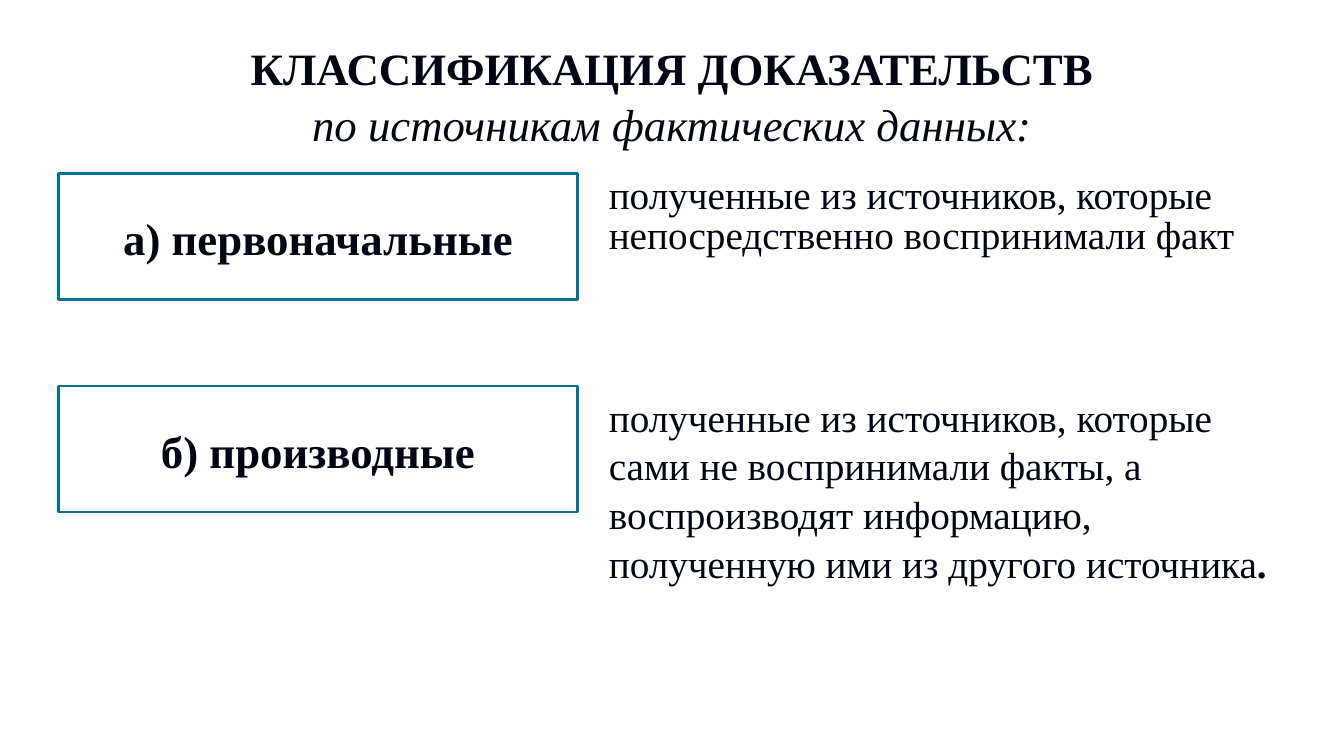
from pptx import Presentation
from pptx.dml.color import RGBColor
from pptx.enum.shapes import MSO_SHAPE
from pptx.enum.text import MSO_ANCHOR, PP_ALIGN
from pptx.util import Inches, Pt

# Content: runs are (text, bold, italic)
TITLE = [
    [("КЛАССИФИКАЦИЯ ДОКАЗАТЕЛЬСТВ", True, False)],
    [("по источникам фактических данных:", False, True)],
]
# Each row: label, description runs, description width and height, line spacing
KINDS = [
    ("а) первоначальные",
     [("полученные из источников, которые непосредственно воспринимали факт", False, False)],
     7.4, 1.56, 0.84),
    ("б) производные",
     [("полученные из источников, которые сами не воспринимали факты, а "
       "воспроизводят информацию, полученную ими из другого источника", False, False),
      (".", True, False)],
     6.75, 2.97, 1.04),
]

# Style
FONT = "Times New Roman"
INK = RGBColor(0x00, 0x05, 0x14)
BORDER = RGBColor(0x00, 0x71, 0x97)
WHITE = RGBColor(0xFF, 0xFF, 0xFF)
CENTER, LEFT = PP_ALIGN.CENTER, PP_ALIGN.LEFT
MIDDLE, TOP = MSO_ANCHOR.MIDDLE, MSO_ANCHOR.TOP
RECTANGLE = MSO_SHAPE.RECTANGLE

# Grid, in inches
SLIDE_WIDTH, SLIDE_HEIGHT = 13.33, 7.5
TITLE_TOP, TITLE_HEIGHT = 0.4, 1.07
LABEL_LEFT, LABEL_WIDTH, LABEL_HEIGHT = 0.58, 5.15, 1.25
DESCRIPTION_LEFT = 5.94
FIRST_ROW, ROW_STEP = 1.72, 2.11


def write_text(shape, paragraphs, size=32, align=CENTER, anchor=MIDDLE, spacing=1.04):
    frame = shape.text_frame
    frame.word_wrap = True
    frame.vertical_anchor = anchor
    for index, runs in enumerate(paragraphs):
        paragraph = frame.add_paragraph() if index else frame.paragraphs[0]
        paragraph.alignment = align
        paragraph.line_spacing = spacing
        for text, bold, italic in runs:
            run = paragraph.add_run()
            run.text = text
            run.font.name = FONT
            run.font.size = Pt(size)
            run.font.bold = bold
            run.font.italic = italic
            run.font.color.rgb = INK


def main():
    presentation = Presentation()
    presentation.slide_width = Inches(SLIDE_WIDTH)
    presentation.slide_height = Inches(SLIDE_HEIGHT)
    slide = presentation.slides.add_slide(presentation.slide_layouts[6])

    # Title
    title = slide.shapes.add_textbox(
        0, Inches(TITLE_TOP), Inches(SLIDE_WIDTH), Inches(TITLE_HEIGHT))
    write_text(title, TITLE)

    # Framed label with its description on each row
    for row, (label, runs, width, height, spacing) in enumerate(KINDS):
        top = Inches(FIRST_ROW + row * ROW_STEP)
        box = slide.shapes.add_shape(
            RECTANGLE, Inches(LABEL_LEFT), top, Inches(LABEL_WIDTH), Inches(LABEL_HEIGHT))
        box.shadow.inherit = False
        box.fill.solid()
        box.fill.fore_color.rgb = WHITE
        box.line.color.rgb = BORDER
        box.line.width = Pt(2)
        write_text(box, [[(label, True, False)]])

        description = slide.shapes.add_textbox(
            Inches(DESCRIPTION_LEFT), top, Inches(width), Inches(height))
        write_text(description, [runs], size=28, align=LEFT, anchor=TOP, spacing=spacing)

    presentation.save("out.pptx")


if __name__ == "__main__":
    main()
